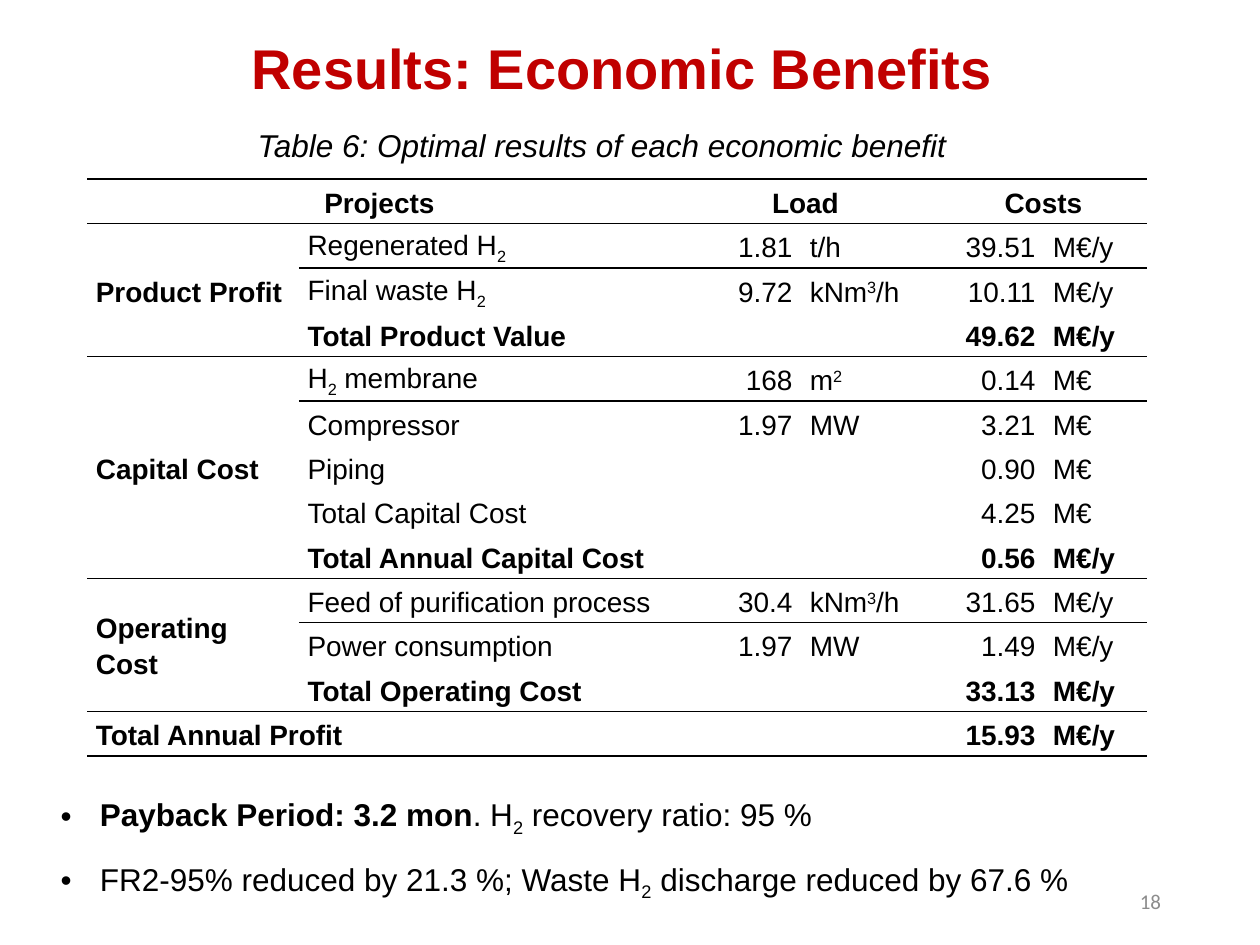
from itertools import accumulate

from lxml.etree import SubElement
from pptx import Presentation
from pptx.dml.color import RGBColor
from pptx.enum.text import MSO_ANCHOR as Anchor, MSO_AUTO_SIZE as Fit, PP_ALIGN as Align
from pptx.oxml import parse_xml
from pptx.oxml.ns import nsdecls, qn
from pptx.util import Pt

RED = RGBColor(0xC0, 0x00, 0x00)
BLACK = RGBColor(0x00, 0x00, 0x00)
GRAY = RGBColor(0x8C, 0x8C, 0x8C)

# Content: "_" lowers and "^" raises the next character
TITLE = "Results: Economic Benefits "
CAPTION = "Table 6: Optimal results of each economic benefit"
PAGE_NUMBER = "18"
HEADINGS = ["Projects", "", "Load", "", "Costs", ""]
# Group name, then item, load, load unit, cost, cost unit
GROUPS = [
    ("Product Profit", [
        ("Regenerated H_2", "1.81", "t/h", "39.51", "M€/y"),
        ("Final waste H_2", "9.72", "kNm^3/h", "10.11", "M€/y"),
        ("Total Product Value", "", "", "49.62", "M€/y")]),
    ("Capital Cost", [
        ("H_2 membrane", "168", "m^2", "0.14", "M€"),
        ("Compressor", "1.97", "MW", "3.21", "M€"),
        ("Piping", "", "", "0.90", "M€"),
        ("Total Capital Cost", "", "", "4.25", "M€"),
        ("Total Annual Capital Cost", "", "", "0.56", "M€/y")]),
    ("Operating Cost", [
        ("Feed of purification process", "30.4", "kNm^3/h", "31.65", "M€/y"),
        ("Power consumption", "1.97", "MW", "1.49", "M€/y"),
        ("Total Operating Cost", "", "", "33.13", "M€/y")]),
]
PROFIT = ["Total Annual Profit", "", "", "", "15.93", "M€/y"]
# Each bullet is a list of (text, bold)
BULLETS = [
    [("Payback Period: 3.2 mon", True), (". H_2 recovery ratio: 95 %", False)],
    [("FR2-95% reduced by 21.3 %; Waste H_2 discharge reduced by 67.6 %", False)],
]

# Layout, in points
TITLE_BOX = (49.5, 2, 621, 78)
NUMBER_BOX = (508.5, 500.5, 162, 28.75)
CAPTION_BOX = (106, 68.5, 476, 29)
BULLET_BOX = (27.5, 451, 651.5, 65.5)
TABLE_LEFT, TABLE_TOP, ROW_HEIGHT = 49.8, 102.4, 25.36
COLUMN_WIDTHS = [121, 213, 74, 79, 60, 59]
COLUMN_ALIGN = [Align.LEFT, Align.LEFT, Align.RIGHT, Align.LEFT, Align.RIGHT, Align.LEFT]
CELL_MARGIN = 5
THICK, THIN = 1.5, 1
NO_STYLE = "{2D5ABB26-0587-4C30-8999-92F81FD0307C}"
SHIFTS = {"_": "-25000", "^": "30000"}


def apply(target, values):
    for name, value in values.items():
        setattr(target, name, value)


def add_spans(para, text, size, color=BLACK, name="Arial", **style):
    """Write text as runs, cut at the shift marks."""
    pieces, shift, start = [], None, 0
    for index, char in enumerate(text):
        if char in SHIFTS:
            pieces += [(text[start:index], None), (text[index + 1], SHIFTS[char])]
            start = index + 2
    pieces.append((text[start:], None))
    for piece, shift in pieces:
        if piece:
            span = para.add_run()
            span.text = piece
            apply(span.font, {"size": Pt(size), "name": name, **style})
            span.font.color.rgb = color
            if shift:
                span.font._element.set("baseline", shift)


def add_box(page, place, **frame_values):
    box = page.shapes.add_textbox(*map(Pt, place))
    apply(box.text_frame, {"word_wrap": True, **frame_values})
    return box.text_frame


def add_border(cell, tag, width):
    """Borders go ahead of the fill in the cell properties."""
    line = parse_xml(
        f'<a:{tag} {nsdecls("a")} w="{Pt(width)}"><a:solidFill>'
        f'<a:srgbClr val="{BLACK}"/></a:solidFill></a:{tag}>')
    props = cell._tc.get_or_add_tcPr()
    props.insert(len(props.findall(qn("a:lnT"))), line)


def add_results_table(page):
    rows = [HEADINGS]
    for group, items in GROUPS:
        rows += [[group if i == 0 else "", *item] for i, item in enumerate(items)]
    rows.append(PROFIT)
    bold_rows = {0, len(rows) - 1}

    frame = page.shapes.add_table(
        len(rows), len(COLUMN_WIDTHS), Pt(TABLE_LEFT), Pt(TABLE_TOP),
        Pt(sum(COLUMN_WIDTHS)), Pt(ROW_HEIGHT * len(rows)))
    table = frame.table
    apply(table, {"first_row": False, "horz_banding": False})
    table._tbl.tblPr.find(qn("a:tableStyleId")).text = NO_STYLE
    for column, width in zip(table.columns, COLUMN_WIDTHS):
        column.width = Pt(width)
    for row in table.rows:
        row.height = Pt(ROW_HEIGHT)

    # Rules lie above the heading, each group and the profit, and at the foot
    sizes = [len(items) for _, items in GROUPS]
    starts = list(accumulate(sizes, initial=1))
    bold_rows.update(start - 1 for start in starts[1:])
    rules = {0: THICK, **{start: THIN for start in starts}, len(rows): THICK}

    for r, texts in enumerate(rows):
        for c, text in enumerate(texts):
            cell = table.cell(r, c)
            apply(cell, {"margin_left": Pt(CELL_MARGIN), "margin_right": Pt(CELL_MARGIN),
                         "margin_top": 0, "margin_bottom": 0,
                         "vertical_anchor": Anchor.MIDDLE})
            cell.fill.background()
            for tag, edge in (("lnT", r), ("lnB", r + 1)):
                if edge in rules:
                    add_border(cell, tag, rules[edge])
            if text:
                para = cell.text_frame.paragraphs[0]
                para.alignment = Align.CENTER if r == 0 else COLUMN_ALIGN[c]
                para.line_spacing = 1.15
                add_spans(para, text, 16, bold=c == 0 or r in bold_rows)

    # Merged cells: heading pairs, group names and the profit label
    for c in (0, 2, 4):
        table.cell(0, c).merge(table.cell(0, c + 1))
    for start, size in zip(starts, sizes):
        table.cell(start, 0).merge(table.cell(start + size - 1, 0))
    table.cell(len(rows) - 1, 0).merge(table.cell(len(rows) - 1, 1))


def add_bullets(page):
    frame = add_box(page, BULLET_BOX, vertical_anchor=Anchor.MIDDLE,
                    auto_size=Fit.SHAPE_TO_FIT_TEXT)
    for i, parts in enumerate(BULLETS):
        para = frame.add_paragraph() if i else frame.paragraphs[0]
        apply(para, {"line_spacing": 1.1, "space_after": Pt(10)})
        props = para._p.get_or_add_pPr()
        props.set("marL", str(Pt(22.5)))
        props.set("indent", str(-Pt(22.5)))
        SubElement(props, qn("a:buFont")).set("typeface", "Arial")
        SubElement(props, qn("a:buChar")).set("char", "•")
        for text, bold in parts:
            add_spans(para, text, 18, bold=bold)


def main():
    deck = Presentation()
    apply(deck, {"slide_width": Pt(720), "slide_height": Pt(540)})
    page = deck.slides.add_slide(deck.slide_layouts[5])

    # Title
    title = page.shapes.title
    apply(title, dict(zip(("left", "top", "width", "height"), map(Pt, TITLE_BOX))))
    apply(title.text_frame, {"vertical_anchor": Anchor.MIDDLE, "auto_size": Fit.NONE})
    para = title.text_frame.paragraphs[0]
    apply(para, {"alignment": Align.CENTER, "line_spacing": 0.9})
    add_spans(para, TITLE, 32, RED, bold=True)

    # Page number
    para = add_box(page, NUMBER_BOX, vertical_anchor=Anchor.MIDDLE).paragraphs[0]
    para.alignment = Align.RIGHT
    add_spans(para, PAGE_NUMBER, 12, GRAY, "Calibri")

    # Caption, table and bullets
    para = add_box(page, CAPTION_BOX, auto_size=Fit.SHAPE_TO_FIT_TEXT).paragraphs[0]
    para.alignment = Align.CENTER
    add_spans(para, CAPTION, 18, italic=True)
    add_results_table(page)
    add_bullets(page)
    deck.save("out.pptx")


if __name__ == "__main__":
    main()
